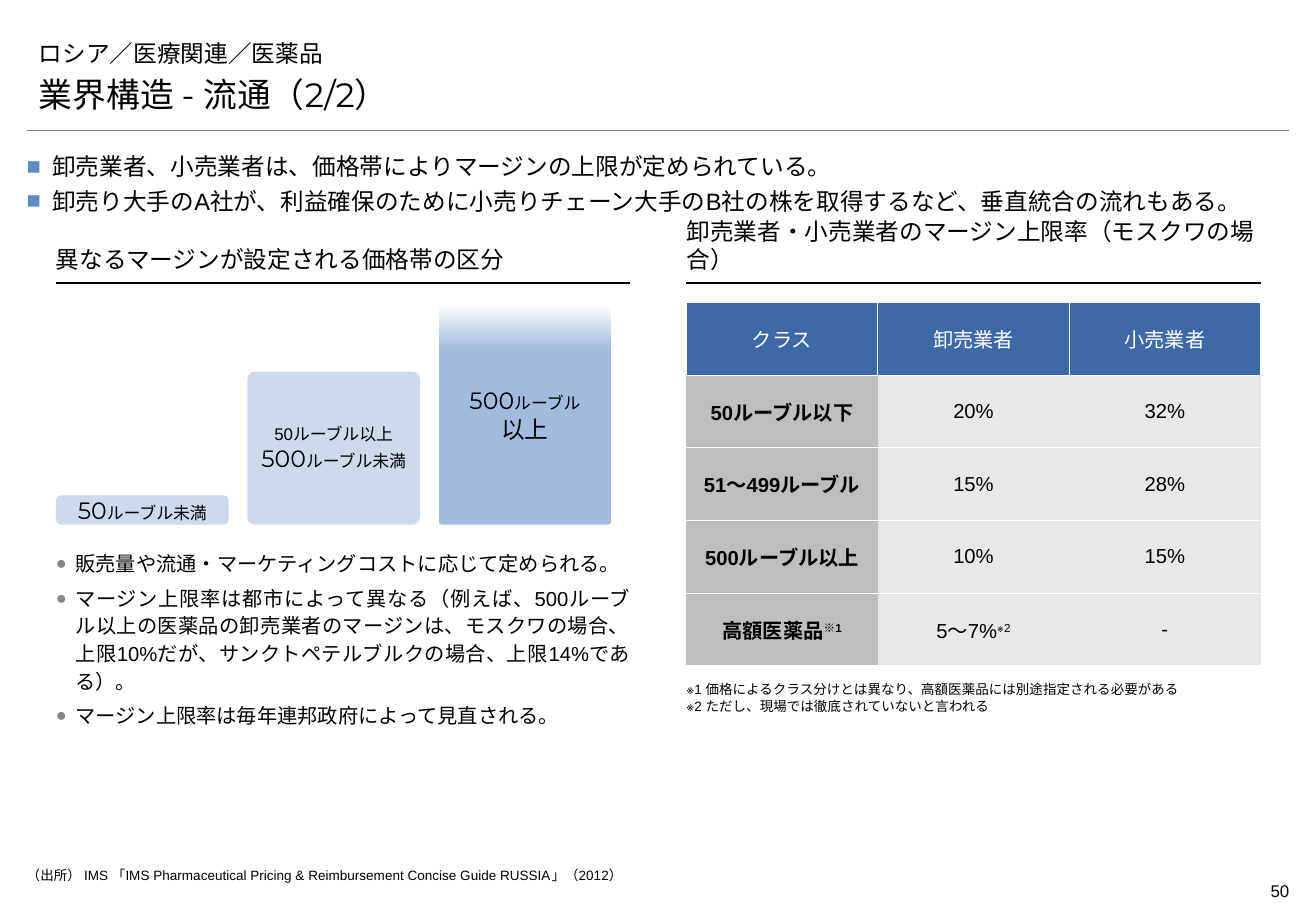
"""Build the slide on drug distribution margins in Russia."""
from copy import deepcopy
from dataclasses import dataclass

from lxml import etree
from pptx import Presentation
from pptx import util as u
from pptx.dml.color import RGBColor
from pptx.enum import shapes, text
from pptx.oxml import ns


@dataclass(frozen=True)
class Theme:
    latin: str = "Arial"
    display: str = "Montserrat"
    japanese: str = "Noto Sans CJK JP"
    black: str = "000000"
    white: str = "FFFFFF"
    gray_rule: str = "7F7F7F"
    square: str = "5F8AC3"
    dot: str = "868686"
    header: str = "3D6AA7"
    label: str = "BEBEBE"
    value: str = "E8E8E8"
    pale_blue: str = "CCDAEC"
    mid_blue: str = "A2BBDC"
    title: int = 20
    heading: int = 14
    body: int = 12
    small: int = 10
    note: int = 8


THEME = Theme()


@dataclass(frozen=True)
class Piece:
    text: str
    size: int
    font: str = THEME.latin
    color: str = THEME.black
    bold: bool = False
    raised: bool = False
    line_break: bool = False


@dataclass(frozen=True)
class Bullet:
    mark: str
    color: str
    percent: int
    indent: float
    line_spacing: float
    space_after: int


@dataclass(frozen=True)
class TextBlock:
    left: float
    top: float
    width: float
    height: float
    lines: list[str]
    size: int
    font: str = THEME.latin
    margins: tuple[float, float, float, float] = (0, 0.13, 0, 0.13)
    anchor: text.MSO_ANCHOR = text.MSO_ANCHOR.TOP
    align: text.PP_ALIGN = text.PP_ALIGN.LEFT
    bullet: Bullet | None = None


@dataclass(frozen=True)
class PriceBand:
    height: float
    corner: float
    side_margin: float
    pieces: list[Piece]
    wrap: bool = False
    fades: bool = False


def rgb(color: str) -> RGBColor:
    return RGBColor.from_string(color)


def add_element(parent, tag: str, **attributes: str):
    element = etree.SubElement(parent, ns.qn(tag))
    for name, value in attributes.items():
        element.set(name, value)
    return element


def write_pieces(paragraph, pieces: list[Piece]) -> None:
    for piece in pieces:
        run = paragraph.add_run()
        run.text = piece.text
        run.font.size = u.Pt(piece.size)
        run.font.name = piece.font
        run.font.bold = piece.bold
        run.font.color.rgb = rgb(piece.color)
        properties = run.font._element
        add_element(properties, "a:ea", typeface=THEME.japanese)
        if piece.raised:
            properties.set("baseline", "30000")
        if piece.line_break:
            paragraph.add_line_break()
            paragraph._p[-1].append(deepcopy(properties))


def set_margins(target, margins: tuple[float, float, float, float]) -> None:
    sides = ("margin_left", "margin_top", "margin_right", "margin_bottom")
    for side, margin in zip(sides, margins):
        setattr(target, side, u.Cm(margin))


def apply_bullet(paragraph, bullet: Bullet) -> None:
    paragraph.line_spacing = bullet.line_spacing
    paragraph.space_after = u.Pt(bullet.space_after)
    properties = paragraph._p.get_or_add_pPr()
    properties.set("marL", str(u.Cm(bullet.indent)))
    properties.set("indent", str(-u.Cm(bullet.indent)))
    add_element(add_element(properties, "a:buClr"), "a:srgbClr", val=bullet.color)
    add_element(properties, "a:buSzPct", val=str(bullet.percent * 1000))
    add_element(properties, "a:buFont", typeface=THEME.latin)
    add_element(properties, "a:buChar", char=bullet.mark)


def add_text(slide, block: TextBlock) -> None:
    shape = slide.shapes.add_textbox(*map(u.Cm, (block.left, block.top, block.width, block.height)))
    frame = shape.text_frame
    frame.word_wrap = True
    frame.vertical_anchor = block.anchor
    set_margins(frame, block.margins)
    for index, line in enumerate(block.lines):
        paragraph = frame.add_paragraph() if index else frame.paragraphs[0]
        paragraph.alignment = block.align
        if block.bullet:
            apply_bullet(paragraph, block.bullet)
        write_pieces(paragraph, [Piece(line, block.size, block.font)])


def add_rule(slide, left: float, right: float, top: float, color: str, width: float) -> None:
    rule = slide.shapes.add_connector(
        shapes.MSO_CONNECTOR.STRAIGHT, u.Cm(left), u.Cm(top), u.Cm(right), u.Cm(top))
    rule.line.color.rgb = rgb(color)
    rule.line.width = u.Pt(width)
    add_element(rule._element.spPr, "a:effectLst")


def add_price_band(slide, band: PriceBand, left: float, bottom: float) -> None:
    shape = slide.shapes.add_shape(
        shapes.MSO_SHAPE.ROUNDED_RECTANGLE, u.Cm(left), u.Cm(bottom - band.height),
        u.Cm(3.61), u.Cm(band.height))
    shape.adjustments[0] = band.corner
    shape.shadow.inherit = False
    shape.line.fill.background()
    if band.fades:
        shape.fill.gradient()
        shape.fill.gradient_angle = 90
        stops = ((0.8, THEME.mid_blue), (1, THEME.white))
        for stop, (position, color) in zip(shape.fill.gradient_stops, stops):
            stop.position = position
            stop.color.rgb = rgb(color)
    else:
        shape.fill.solid()
        shape.fill.fore_color.rgb = rgb(THEME.pale_blue)
    frame = shape.text_frame
    frame.word_wrap = band.wrap
    frame.vertical_anchor = text.MSO_ANCHOR.MIDDLE
    set_margins(frame, (band.side_margin, 0.13, band.side_margin, 0.13))
    frame.paragraphs[0].alignment = text.PP_ALIGN.CENTER
    write_pieces(frame.paragraphs[0], band.pieces)


def add_margin_table(slide, left: float, width: float, rows: list[list[str]]) -> None:
    table = slide.shapes.add_table(
        len(rows), len(rows[0]), u.Cm(left), u.Cm(6.32), u.Cm(width), u.Cm(7.6)).table
    table.first_row = table.horz_banding = False
    table._tbl.tblPr.find(ns.qn("a:tableStyleId")).text = "{2D5ABB26-0587-4C30-8999-92F81FD0307C}"
    for row, labels in enumerate(rows):
        for column, label in enumerate(labels):
            cell = table.cell(row, column)
            is_header, is_label = row == 0, column == 0
            edges = ("a:lnL", "a:lnR", "a:lnT", "a:lnB") if is_header else ("a:lnT", "a:lnB")
            for edge in edges:
                border = add_element(cell._tc.get_or_add_tcPr(), edge, w=str(u.Pt(0.5)))
                add_element(add_element(border, "a:solidFill"), "a:srgbClr", val=THEME.white)
            cell.fill.solid()
            cell.fill.fore_color.rgb = rgb(
                THEME.header if is_header else THEME.label if is_label else THEME.value)
            cell.vertical_anchor = text.MSO_ANCHOR.MIDDLE
            if not is_header:
                set_margins(cell, (0.18, 0, 0.18, 0))
            font = THEME.japanese if is_header else THEME.latin
            color = THEME.white if is_header else THEME.black
            bold = is_label and not is_header
            main, mark, number = label.partition("※")
            pieces = [Piece(main, THEME.body, font, color, bold)]
            if mark:
                pieces.append(Piece(mark + number, THEME.body, font, color, bold, raised=True))
            paragraph = cell.text_frame.paragraphs[0]
            paragraph.alignment = text.PP_ALIGN.CENTER
            write_pieces(paragraph, pieces)


def main() -> None:
    presentation = Presentation()
    presentation.slide_width, presentation.slide_height = u.Cm(27.51), u.Cm(19.05)
    slide = presentation.slides.add_slide(presentation.slide_layouts[6])
    edge, full, left, right, column = 0.56, 26.39, 1.17, 14.35, 12
    inset, none, bottom = (0.25, 0.13, 0.25, 0.13), (0, 0, 0, 0), text.MSO_ANCHOR.BOTTOM
    square = Bullet("■", THEME.square, 100, 0.53, 1.1, 2)
    dot = Bullet("●", THEME.dot, 90, 0.41, 1.14, 4)
    justify = text.PP_ALIGN.JUSTIFY
    blocks = [
        TextBlock(24.94, 18.29, 2.01, 0.69, ["50"], THEME.small, align=text.PP_ALIGN.RIGHT),
        TextBlock(edge, 0.53, full, 1, ["ロシア／医療関連／医薬品"],
                  THEME.heading, THEME.display, inset, bottom),
        TextBlock(edge, 1.52, full, 1, ["業界構造 - 流通（2/2）"],
                  THEME.title, THEME.display, inset, bottom),
        TextBlock(edge, 3.12, full, 1.4, [
            "卸売業者、小売業者は、価格帯によりマージンの上限が定められている。",
            "卸売り大手のA社が、利益確保のために小売りチェーン大手のB社の株を取得するなど、垂直統合の流れもある。",
        ], THEME.heading, margins=none, align=justify, bullet=square),
        TextBlock(left, 11.33, column, 3.45, [
            "販売量や流通・マーケティングコストに応じて定められる。",
            "マージン上限率は都市によって異なる（例えば、500ルーブル以上の医薬品の卸売業者のマージンは、"
            "モスクワの場合、上限10%だが、サンクトペテルブルクの場合、上限14%である）。",
            "マージン上限率は毎年連邦政府によって見直される。",
        ], THEME.body, align=justify, bullet=dot),
        TextBlock(right, 14.12, column, 0.94, [
            "※1 価格によるクラス分けとは異なり、高額医薬品には別途指定される必要がある",
            "※2 ただし、現場では徹底されていないと言われる",
        ], THEME.note, margins=(0, 0.13, 0.25, 0.13)),
        TextBlock(edge, 18.14, 25.4, 0.41, [
            "（出所） IMS 「IMS Pharmaceutical Pricing & Reimbursement Concise Guide RUSSIA」（2012）",
        ], THEME.note, margins=none),
    ]
    add_rule(slide, edge, edge + full, 2.72, THEME.gray_rule, 0.25)
    headings = ((left, "異なるマージンが設定される価格帯の区分"),
                (right, "卸売業者・小売業者のマージン上限率（モスクワの場合）"))
    for start, heading in headings:
        add_rule(slide, start, start + column, 5.92, THEME.black, 0.75)
        blocks.append(TextBlock(start, 5.13, column, 0.79, [heading], THEME.heading,
                                THEME.display, (0, 0.13, 0, 0.2), bottom))
    for block in blocks:
        add_text(slide, block)
    below = Piece("ルーブル未満", THEME.small)
    fifty, five_hundred = (Piece(n, THEME.heading, THEME.display) for n in ("50", "500"))
    bands = [
        PriceBand(0.61, 0.17, 0.25, [fifty, below]),
        PriceBand(3.2, 0.05, 0.1, [
            Piece("50ルーブル以上", THEME.small, line_break=True), five_hundred, below]),
        PriceBand(4.6, 0.02, 0.1, [
            five_hundred, Piece("ルーブル", THEME.small, line_break=True),
            Piece("以上", THEME.heading, THEME.japanese)], wrap=True, fades=True),
    ]
    for index, band in enumerate(bands):
        add_price_band(slide, band, left + 4 * index, 10.97)
    add_margin_table(slide, right, column, [
        ["クラス", "卸売業者", "小売業者"],
        ["50ルーブル以下", "20%", "32%"],
        ["51～499ルーブル", "15%", "28%"],
        ["500ルーブル以上", "10%", "15%"],
        ["高額医薬品※1", "5～7%※2", "-"],
    ])
    presentation.save("out.pptx")


if __name__ == "__main__":
    main()
